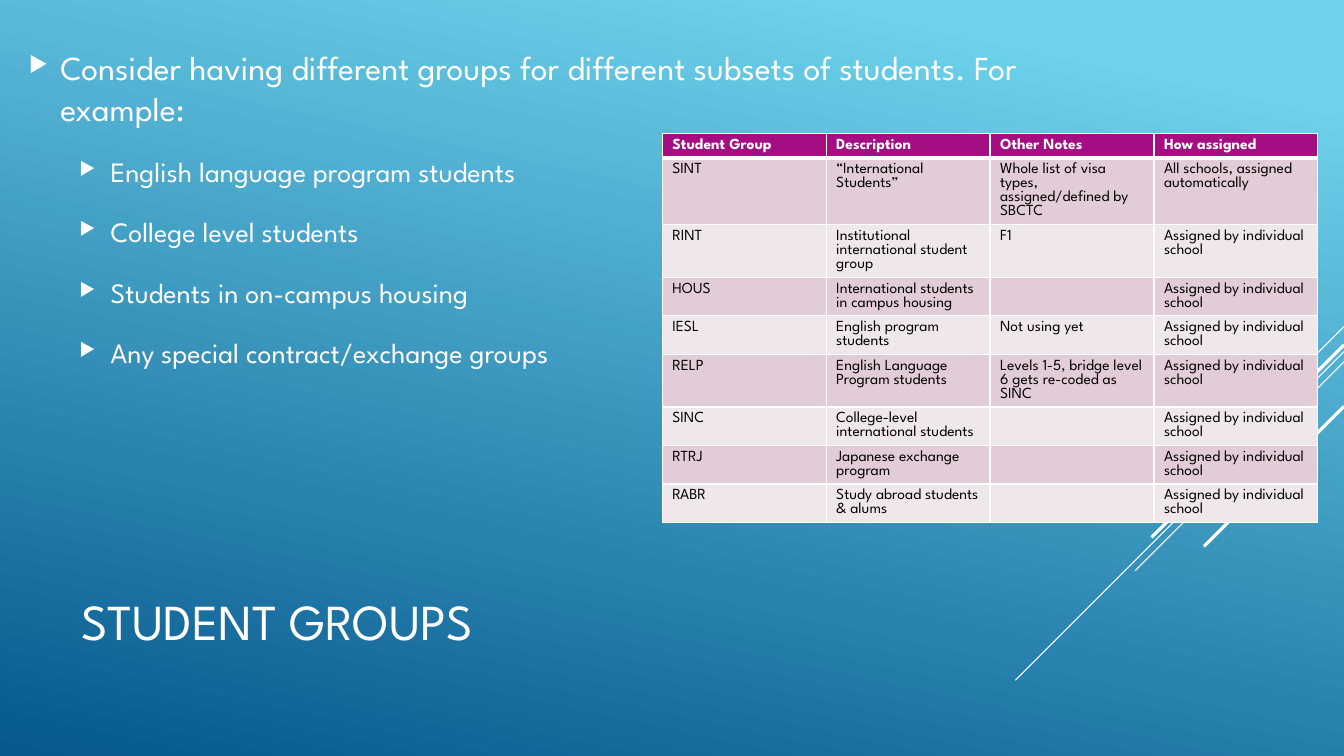
from lxml import etree
from pptx import Presentation
from pptx.dml.color import RGBColor
from pptx.enum.shapes import MSO_CONNECTOR
from pptx.enum.text import MSO_ANCHOR
from pptx.oxml.ns import qn
from pptx.util import Cm, Pt

STRAIGHT = MSO_CONNECTOR.STRAIGHT
TOP, MIDDLE = MSO_ANCHOR.TOP, MSO_ANCHOR.MIDDLE
FONT = "League Spartan"
COLORS = {
    "sky": "6ED2EB",
    "deep": "06588E",
    "white": "FFFFFF",
    "black": "000000",
    "header": "A50E82",
    "odd": "E1CCD8",
    "even": "F0E7ED",
}


def style_text(paragraph, size, color, bold=False):
    for run in paragraph.runs:
        run.font.name = FONT
        run.font.size = Pt(size)
        run.font.bold = bold
        run.font.color.rgb = RGBColor.from_string(COLORS[color])


def add_node(parent, tag, **attributes):
    return etree.SubElement(parent, qn(tag), **attributes)


prs = Presentation()
prs.slide_width, prs.slide_height = Cm(33.87), Cm(19.05)
slide = prs.slides.add_slide(prs.slide_layouts[6])

backdrop = slide.background.fill
backdrop.gradient()
backdrop.gradient_angle = 258
for stop, position, color in zip(backdrop.gradient_stops, (0.1, 1), ("sky", "deep")):
    stop.position = position
    stop.color.rgb = RGBColor.from_string(COLORS[color])

slashes = [
    (8.23, 2.54, 0.75),
    (8.86, 8.28, 0.75),
    (9.12, 5.26, 0.75),
    (8.69, 4.85, 2.25),
    (10.24, 3.53, 2.25),
]
for start, reach, weight in slashes:
    slash = slide.shapes.add_connector(
        STRAIGHT, Cm(33.87), Cm(start), Cm(33.87 - reach), Cm(start + reach))
    slash.line.color.rgb = RGBColor.from_string(COLORS["white"])
    slash.line.width = Pt(weight)
    add_node(slash._element.spPr, "a:effectLst")

title = slide.shapes.add_textbox(Cm(1.8), Cm(13.54), Cm(23.7), Cm(4.19)).text_frame
title.word_wrap = True
title.vertical_anchor = MIDDLE
title.text = "STUDENT GROUPS"
style_text(title.paragraphs[0], 36, "white")

advice = slide.shapes.add_textbox(Cm(0.48), Cm(1.16), Cm(26.7), Cm(9.7)).text_frame
advice.word_wrap = True
advice.vertical_anchor = TOP
advice.margin_top = 0
points = [
    "Consider having different groups for different subsets of students. For example:",
    "English language program students",
    "College level students",
    "Students in on-campus housing",
    "Any special contract/exchange groups",
]
for index, point in enumerate(points):
    paragraph = advice.add_paragraph() if index else advice.paragraphs[0]
    paragraph.text = point
    level, size, pitch, before, indent = (1, 20, 24, 4, 2.06) if index else (0, 24, 29.3, 0, 0.79)
    style_text(paragraph, size, "white")
    paragraph.level = level
    paragraph.line_spacing = Pt(pitch)
    paragraph.space_before = Pt(before)
    paragraph.space_after = Pt(15)
    properties = paragraph._p.get_or_add_pPr()
    properties.set("marL", str(Cm(indent)))
    properties.set("indent", str(-Cm(0.79)))
    add_node(add_node(properties, "a:buClr"), "a:srgbClr", val=COLORS["white"])
    add_node(properties, "a:buSzPct", val="65000")
    add_node(properties, "a:buChar", char="▶")

BY_SCHOOL = "Assigned by individual school"
groups = [
    (1, "Student Group", "Description", "Other Notes", "How assigned"),
    (4, "SINT", "“International Students”",
     "Whole list of visa types, assigned/defined by SBCTC",
     "All schools, assigned automatically"),
    (3, "RINT", "Institutional international student group", "F1", BY_SCHOOL),
    (2, "HOUS", "International students in campus housing", "", BY_SCHOOL),
    (2, "IESL", "English program students", "Not using yet", BY_SCHOOL),
    (3, "RELP", "English Language Program students",
     "Levels 1-5, bridge level 6 gets re-coded as SINC", BY_SCHOOL),
    (2, "SINC", "College-level international students", "", BY_SCHOOL),
    (2, "RTRJ", "Japanese exchange program", "", BY_SCHOOL),
    (2, "RABR", "Study abroad students & alums", "", BY_SCHOOL),
]
group_table = slide.shapes.add_table(
    len(groups), 4, Cm(16.69), Cm(3.37), Cm(16.51), Cm(9.8)).table
for column in group_table.columns:
    column.width = Cm(4.13)

for row, (line_count, *entries) in enumerate(groups):
    group_table.rows[row].height = Cm(0.26 + 0.355 * line_count)
    is_header = row == 0
    fill = "header" if is_header else "odd" if row % 2 else "even"
    edges = {"a:lnL": 1, "a:lnR": 1, "a:lnT": 3 if row == 1 else 1, "a:lnB": 3 if is_header else 1}
    for column, entry in enumerate(entries):
        cell = group_table.cell(row, column)
        cell.text = entry
        paragraph = cell.text_frame.paragraphs[0]
        paragraph.line_spacing = Pt(10)
        style_text(paragraph, 11, "white" if is_header else "black", is_header)
        if not entry:
            add_node(paragraph._p, "a:endParaRPr", sz="1100")
        for edge, weight in edges.items():
            border = add_node(cell._tc.get_or_add_tcPr(), edge, w=str(Pt(weight)))
            add_node(add_node(border, "a:solidFill"), "a:srgbClr", val=COLORS["white"])
        cell.fill.solid()
        cell.fill.fore_color.rgb = RGBColor.from_string(COLORS[fill])

prs.save("out.pptx")
